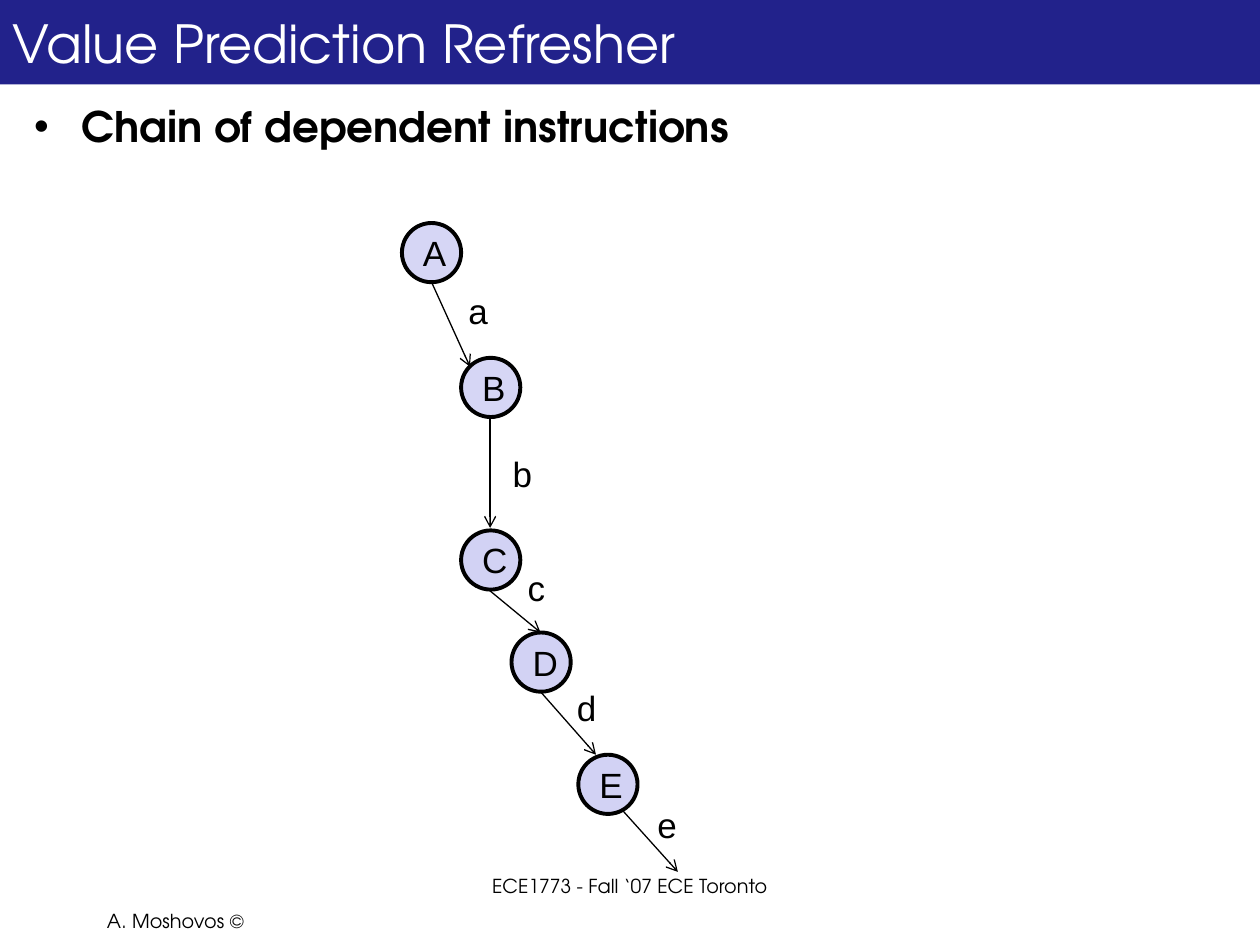
from pptx import Presentation
from pptx.dml.color import RGBColor as RGB
from pptx.enum.shapes import MSO_CONNECTOR as LINE, MSO_SHAPE as SHAPE
from pptx.enum.text import MSO_ANCHOR as ANCHOR, MSO_AUTO_SIZE as FIT, PP_ALIGN as ALIGN
from pptx.oxml.xmlchemy import OxmlElement as Element
from pptx.util import Inches, Pt

NAVY = RGB(0x22, 0x22, 0x8B)
WHITE = RGB(0xFF, 0xFF, 0xFF)
BLACK = RGB(0x00, 0x00, 0x00)
LILAC = RGB(0xD6, 0xD6, 0xF5)
MAUVE = RGB(0xD2, 0xD2, 0xF4)
HEAD = "TeX Gyre Adventor"
SANS = "Arial"


def place(shape, *box):
    shape.left, shape.top, shape.width, shape.height = map(Inches, box)


def write(shape, text, size, font, color=BLACK, align=ALIGN.LEFT, bold=False):
    para = shape.text_frame.paragraphs[0]
    para.alignment = align
    run = para.add_run()
    run.text = text
    run.font.size = Pt(size)
    run.font.name = font
    run.font.bold = bold
    run.font.color.rgb = color


deck = Presentation()
deck.slide_width, deck.slide_height = Inches(10), Inches(7.5)
slide = deck.slides.add_slide(deck.slide_layouts[1])
shapes = slide.shapes

title = shapes.title
place(title, 0, 0, 10, 0.67)
title.fill.solid()
title.fill.fore_color.rgb = NAVY
title.text_frame.vertical_anchor = ANCHOR.MIDDLE
write(title, "Value Prediction Refresher", 30, HEAD, WHITE)

body = slide.placeholders[1]
place(body, 0.17, 0.75, 9.67, 6.42)
write(body, "Chain of dependent instructions", 24, HEAD, bold=True)

notes = [
    ("A. Moshovos ©", 0.75, 7.17, 2.08, ALIGN.LEFT),
    ("ECE1773 - Fall ‘07 ECE Toronto", 3.25, 6.89, 3.5, ALIGN.CENTER),
]
for text, left, top, width, align in notes:
    box = shapes.add_textbox(Inches(left), Inches(top), Inches(width), Inches(0.42))
    box.text_frame.word_wrap = True
    write(box, text, 11, HEAD, align=align)

nodes = [
    ("A", 3.19, 1.77, LILAC),
    ("B", 3.66, 2.84, LILAC),
    ("C", 3.66, 4.21, MAUVE),
    ("D", 4.06, 5.02, MAUVE),
    ("E", 4.59, 5.99, MAUVE),
]
for name, left, top, color in nodes:
    node = shapes.add_shape(SHAPE.OVAL, Inches(left), Inches(top), Inches(0.47), Inches(0.47))
    node.shadow.inherit = False
    node.fill.solid()
    node.fill.fore_color.rgb = color
    node.line.color.rgb = BLACK
    node.line.width = Pt(2.25)
    node.text_frame.vertical_anchor = ANCHOR.MIDDLE
    write(node, name, 20, SANS, align=ALIGN.CENTER)

edges = [
    ("a", (3.43, 2.25, 3.73, 2.91), (3.62, 2.25)),
    ("b", (3.89, 3.32, 3.89, 4.19), (3.97, 3.54)),
    ("c", (3.89, 4.69, 4.29, 5.02), (4.09, 4.45)),
    ("d", (4.29, 5.49, 4.73, 5.99), (4.48, 5.4)),
    ("e", (4.93, 6.42, 5.38, 6.92), (5.12, 6.33)),
]
for name, ends, spot in edges:
    edge = shapes.add_connector(LINE.STRAIGHT, *map(Inches, ends))
    edge.line.color.rgb = BLACK
    edge.line.width = Pt(0.75)
    tip = Element("a:tailEnd")
    tip.set("type", "arrow")
    edge.line._get_or_add_ln().append(tip)
    edge._element.spPr.append(Element("a:effectLst"))

    label = shapes.add_textbox(*map(Inches, spot), Inches(0.36), Inches(0.44))
    label.text_frame.word_wrap = False
    label.text_frame.auto_size = FIT.SHAPE_TO_FIT_TEXT
    write(label, name, 20, SANS)

deck.save("out.pptx")
